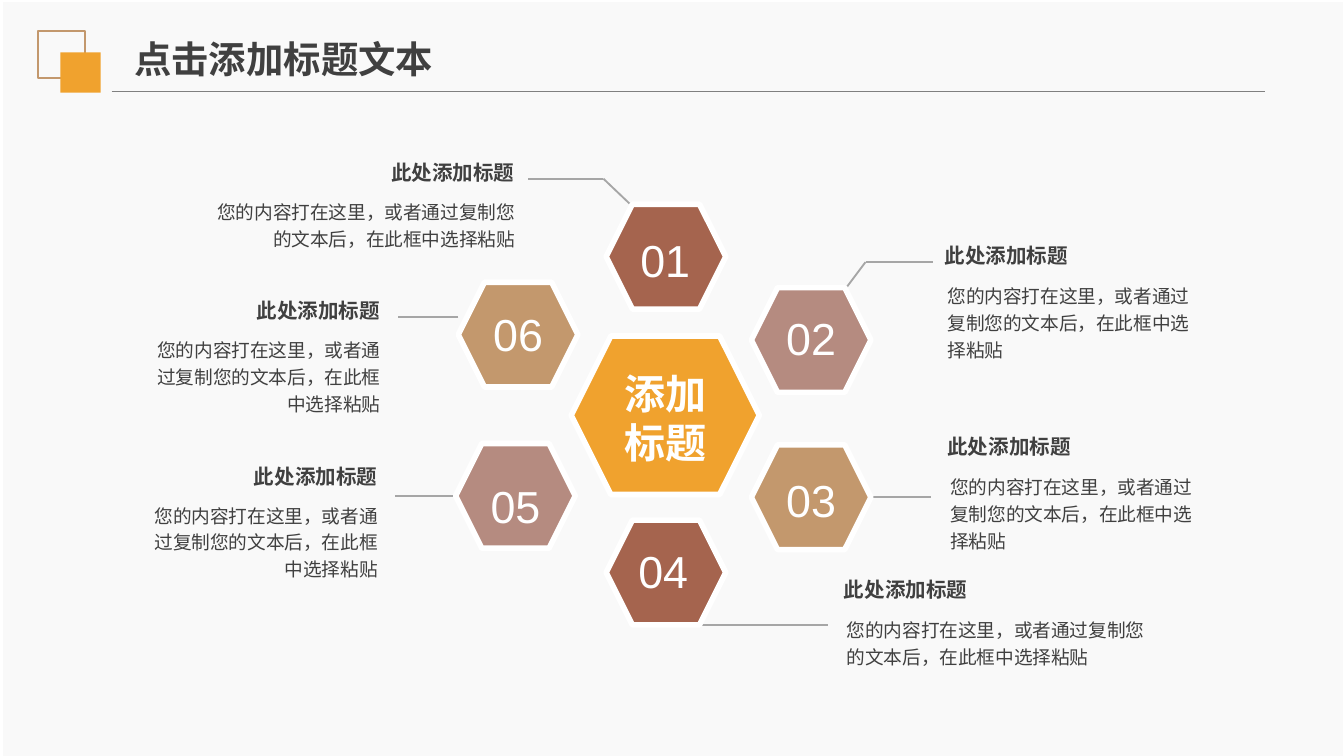
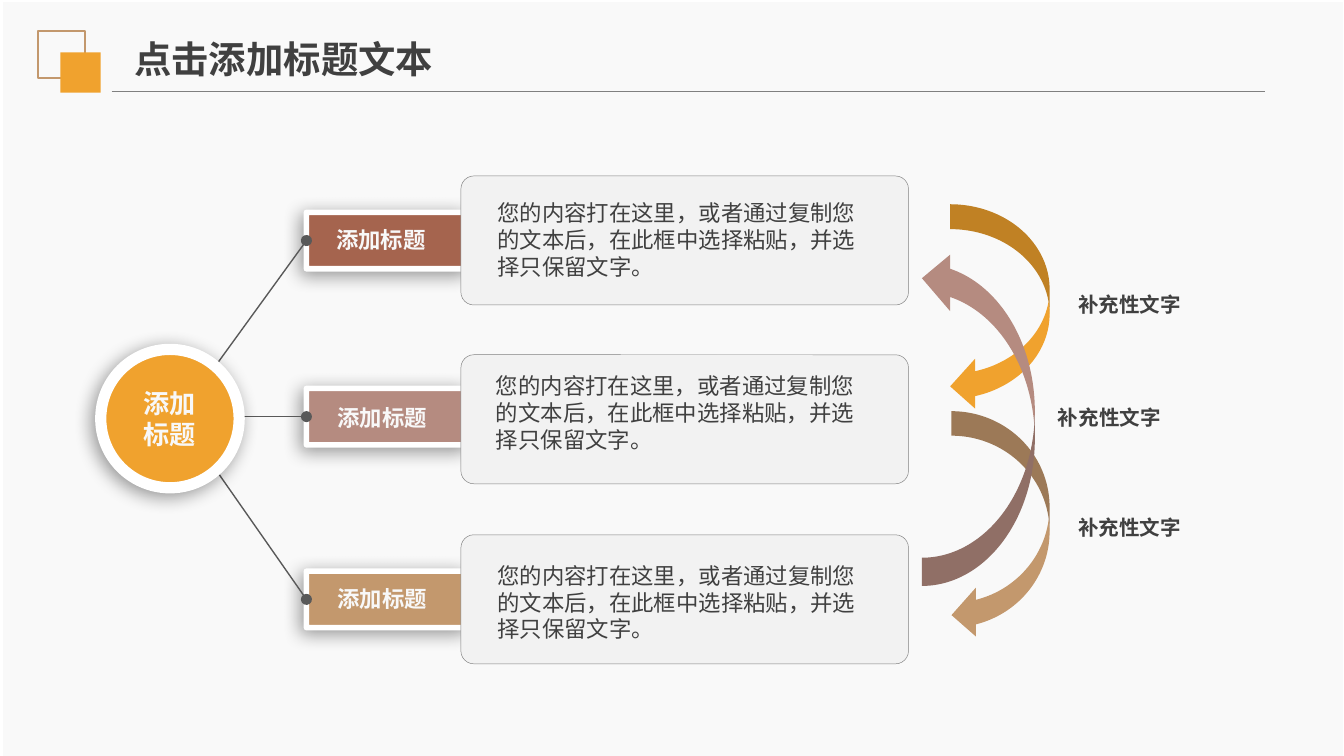
from dataclasses import dataclass
from itertools import pairwise

from lxml.etree import SubElement
from pptx import Presentation
from pptx.dml.color import RGBColor
from pptx.enum.shapes import MSO_CONNECTOR, MSO_SHAPE
from pptx.enum.text import MSO_ANCHOR, MSO_AUTO_SIZE, PP_ALIGN
from pptx.oxml.ns import qn
from pptx.util import Inches, Pt

COLORS = {
    "back": "F3F3F3", "white": "FFFFFF", "pale": "F8F8F8", "card": "F2F2F2",
    "text": "404040", "rule": "808080", "wire": "A6A6A6", "dark": "595959",
    "gold": "F0A22E", "rust": "A5644E", "rose": "B58B80", "tan": "C3986D",
    "black": "000000",
}
HAN = "Noto Sans CJK SC"
NOTE = "您的内容打在这里，或者通过复制您的文本后，在此框中选择粘贴"
TIGHT = (0.07, 0.03)
LEFT, MID, RIGHT = PP_ALIGN.LEFT, PP_ALIGN.CENTER, PP_ALIGN.RIGHT
Box = tuple[float, float, float, float]
Point = tuple[float, float]


@dataclass
class Spoke:
    """A numbered hexagon with its lead line, heading and note."""
    num: str
    fill: str
    hexa: Point
    label: Box
    wire: list[Point]
    head: Point
    note: tuple[float, float]
    left: bool = False


@dataclass
class Row:
    """A tag on the hub with the card beside it."""
    fill: str
    tag: float
    name: Point
    card: float
    note: Point


@dataclass
class Arrow:
    fill: str
    box: Box
    label: Point
    up: bool = False


SPOKES = [
    Spoke("01", "rust", (4.51, 1.52), (4.62, 1.6, 0.66, 0.54),
          [(4.7, 1.53), (4.49, 1.33), (3.93, 1.33)], (2.84, 1.16), (2.44, 0.47), True),
    Spoke("02", "rose", (5.59, 2.14), (5.73, 2.26, 0.61, 0.5),
          [(6.29, 2.15), (6.44, 1.95), (6.94, 1.95)], (6.96, 1.78), (1.99, 0.67)),
    Spoke("03", "tan", (5.59, 3.31), (5.69, 3.39, 0.69, 0.54),
          [(6.48, 3.7), (6.93, 3.7)], (6.98, 3.2), (1.99, 0.67)),
    Spoke("04", "rust", (4.51, 3.87), (4.63, 4, 0.61, 0.5),
          [(5.21, 4.65), (6.16, 4.65)], (6.21, 4.26), (2.4, 0.47)),
    Spoke("05", "rose", (3.39, 3.3), (3.53, 3.43, 0.61, 0.54),
          [(3.39, 3.69), (2.94, 3.69)], (1.82, 3.42), (1.87, 0.67), True),
    Spoke("06", "tan", (3.41, 2.1), (3.55, 2.23, 0.61, 0.5),
          [(3.41, 2.36), (2.96, 2.36)], (1.84, 2.19), (1.87, 0.67), True),
]
ROWS = [
    Row("rust", 1.58, (2.43, 1.65), 1.31, (3.63, 1.52)),
    Row("rose", 2.89, (2.44, 2.97), 2.64, (3.62, 2.81)),
    Row("tan", 4.25, (2.44, 4.32), 3.98, (3.63, 4.22)),
]
ARROWS = [
    Arrow("gold", (7.07, 1.52, 0.74, 1.54), (7.95, 2.14)),
    Arrow("tan", (7.08, 3.06, 0.73, 1.7), (7.95, 3.8)),
    Arrow("rose", (6.86, 1.86, 0.84, 2.5), (7.8, 2.98), True),
]


def tint(name: str) -> RGBColor:
    return RGBColor.from_string(COLORS[name])


def write(frame, text: str, *, size: float, color: str = "text", face: str = HAN,
          bold: bool = False, align=LEFT, space: float | None = None,
          inset: Point = (0.1, 0.05), wrap: bool = True, grow: bool = False,
          anchor=MSO_ANCHOR.TOP) -> None:
    """Fill a text frame, one paragraph per line of text."""
    frame.word_wrap = wrap
    frame.auto_size = MSO_AUTO_SIZE.SHAPE_TO_FIT_TEXT if grow else MSO_AUTO_SIZE.NONE
    frame.vertical_anchor = anchor
    frame.margin_left = frame.margin_right = Inches(inset[0])
    frame.margin_top = frame.margin_bottom = Inches(inset[1])
    for i, line in enumerate(text.split("\n")):
        para = frame.add_paragraph() if i else frame.paragraphs[0]
        para.alignment = align
        if space:
            para.line_spacing = space
        run = para.add_run()
        run.text = line
        font = run.font
        font.size, font.bold, font.name = Pt(size), bold, face
        font.color.rgb = tint(color)
        SubElement(run._r.rPr, qn("a:ea"), typeface=HAN)


def place(slide, box: Box, text: str, **form) -> None:
    """Add a text box."""
    write(slide.shapes.add_textbox(*map(Inches, box)).text_frame, text, **form)


def draw(slide, kind, box: Box, fill: str | None = None, line: str | None = None,
         width: float = 1, glow: bool = False):
    """Add a preset shape; glow gives it a soft drop shadow."""
    shape = slide.shapes.add_shape(kind, *map(Inches, box))
    shape.shadow.inherit = False
    if fill:
        shape.fill.solid()
        shape.fill.fore_color.rgb = tint(fill)
    else:
        shape.fill.background()
    if line:
        shape.line.color.rgb = tint(line)
        shape.line.width = Pt(width)
    else:
        shape.line.fill.background()
    if glow:
        cast = SubElement(shape._element.spPr.find(qn("a:effectLst")), qn("a:outerShdw"),
                          blurRad=str(Pt(10)), dist=str(Pt(3)), dir=str(135 * 60000),
                          algn="tr", rotWithShape="0")
        fade(SubElement(cast, qn("a:srgbClr"), val=COLORS["black"]), 40)
    return shape


def fade(color, part: int) -> None:
    """Set the opacity of a colour element in percent."""
    SubElement(color, qn("a:alpha"), val=str(part * 1000))


def join(slide, start: Point, end: Point, color: str, width: float, dots: bool = False):
    """Add a straight line, with round ends if dots is set."""
    line = slide.shapes.add_connector(MSO_CONNECTOR.STRAIGHT, *map(Inches, (*start, *end)))
    line.line.color.rgb = tint(color)
    line.line.width = Pt(width)
    if dots:
        for tip in ("a:headEnd", "a:tailEnd"):
            SubElement(line.line._get_or_add_ln(), qn(tip), type="oval")
    SubElement(line._element.spPr, qn("a:effectLst"))
    return line


def start(deck):
    """Add a slide with the shared backdrop and title."""
    slide = deck.slides.add_slide(deck.slide_layouts[6])
    slide.background.fill.solid()
    slide.background.fill.fore_color.rgb = tint("back")
    veil = draw(slide, MSO_SHAPE.RECTANGLE, (0.01, 0, 10, 5.65), "white", "white", 2)
    fade(veil._element.spPr.find(qn("a:solidFill"))[0], 58)
    join(slide, (0.83, 0.68), (9.41, 0.68), "rule", 0.75)
    draw(slide, MSO_SHAPE.RECTANGLE, (0.28, 0.23, 0.35, 0.35), line="tan")
    draw(slide, MSO_SHAPE.RECTANGLE, (0.45, 0.39, 0.3, 0.3), "gold")
    place(slide, (0.9, 0.22, 2.45, 0.44), "点击添加标题文本", size=20, bold=True,
          wrap=False, grow=True)
    return slide


def wheel(deck) -> None:
    slide = start(deck)
    for spoke in SPOKES:
        for one, two in pairwise(spoke.wire):
            join(slide, one, two, "wire", 1)
        draw(slide, MSO_SHAPE.HEXAGON, (*spoke.hexa, 0.89, 0.78), spoke.fill, "white", 3)
        place(slide, spoke.label, spoke.num, size=24, color="white", face="Arial",
              align=MID, space=1.2 if spoke.label[3] > 0.5 else None, grow=True)
        x, y = spoke.head
        wide, high = spoke.note
        place(slide, (x, y, 1.06, 0.25), "此处添加标题", size=11, bold=True, align=RIGHT,
              inset=TIGHT, wrap=False, grow=True)
        spot = (x + 1.06 - wide, y + 0.27) if spoke.left else (x + 0.02, y + 0.28)
        place(slide, (*spot, wide, high), NOTE, size=10, space=1.2, inset=TIGHT,
              align=RIGHT if spoke.left else LEFT, grow=True)
    draw(slide, MSO_SHAPE.HEXAGON, (4.25, 2.5, 1.4, 1.18), "gold", "white", 3)
    place(slide, (4.52, 2.69, 0.86, 0.84), "添加标题", size=22, color="white", bold=True,
          align=MID, grow=True)


def tree(deck) -> None:
    slide = start(deck)
    form = dict(face="Calibri", inset=TIGHT)
    for row in ROWS:
        tag = draw(slide, MSO_SHAPE.PENTAGON, (2.28, row.tag, 1.38, 0.42), row.fill,
                   "white", 3, glow=True)
        place(slide, (*row.name, 1.15, 0.27), "添加标题", size=12, color="pale", bold=True,
              anchor=MSO_ANCHOR.MIDDLE, **form)
        mid = row.tag + 0.21
        join(slide, (1.33, 3.1), (2.28, mid), "dark", 0.75, dots=True).end_connect(tag, 1)
    hub = draw(slide, MSO_SHAPE.OVAL, (0.75, 2.6, 1.03, 1.03), "gold", "white", 6, glow=True)
    write(hub.text_frame, "添加\n标题", size=14, color="pale", bold=True, align=MID,
          anchor=MSO_ANCHOR.MIDDLE, **form)
    for arrow in ARROWS:
        curve = draw(slide, MSO_SHAPE.CURVED_LEFT_ARROW, arrow.box, arrow.fill)
        if arrow.up:
            curve.rotation = 180
            curve._element.spPr.find(qn("a:xfrm")).set("flipH", "1")
        place(slide, (*arrow.label, 0.91, 0.25), "补充性文字", size=11, bold=True,
              align=MID, grow=True, **form)
    for row in ROWS:
        card = draw(slide, MSO_SHAPE.ROUNDED_RECTANGLE, (3.43, row.card, 3.33, 0.96),
                    "card", "rule", 0.25)
        card.adjustments[0] = 0.1
        place(slide, (*row.note, 2.91, 0.52), NOTE + "，并选择只保留文字。", size=12,
              anchor=MSO_ANCHOR.MIDDLE, **form)


def main() -> None:
    deck = Presentation()
    deck.slide_width = Inches(10)
    deck.slide_height = deck.slide_width * 9 // 16
    wheel(deck)
    tree(deck)
    deck.save("out.pptx")


if __name__ == "__main__":
    main()
